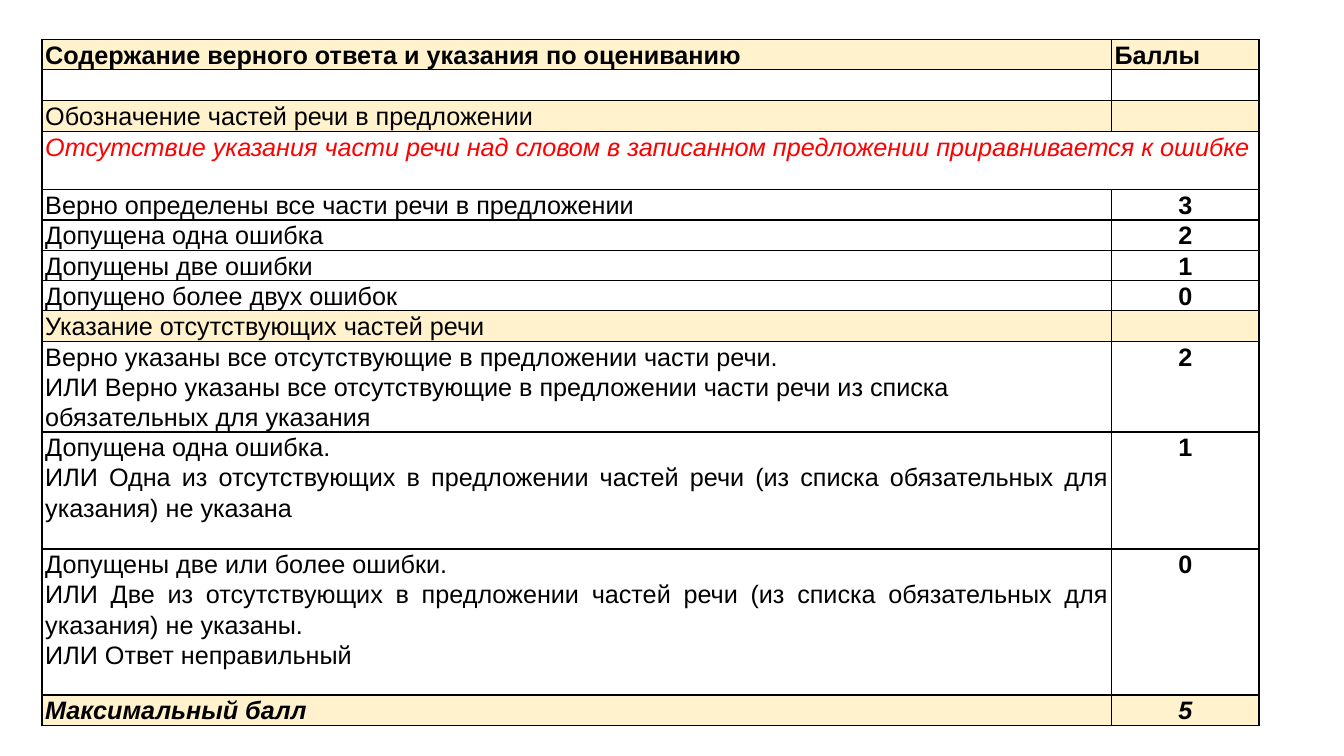
import pptx
import pptx.util
import pptx.dml.color
import pptx.enum.text
import lxml.etree

Cm = pptx.util.Cm
Align = pptx.enum.text.PP_ALIGN
CREAM, WHITE, BLACK, RED = "FFF2CC", "FFFFFF", "000000", "FF0000"


def color(value):
    return pptx.dml.color.RGBColor.from_string(value)


def add_borders(cell):
    properties = cell._tc.get_or_add_tcPr()
    namespace = "http://schemas.openxmlformats.org/drawingml/2006/main"
    for side in ("lnL", "lnR", "lnT", "lnB"):
        line = lxml.etree.SubElement(properties, f"{{{namespace}}}{side}", w="12700")
        fill = lxml.etree.SubElement(line, f"{{{namespace}}}solidFill")
        lxml.etree.SubElement(fill, f"{{{namespace}}}srgbClr", val=BLACK)


criteria = [
    ("Содержание верного ответа и указания по оцениванию", "Баллы", 0.74, CREAM),
    ("", "", 0.74, WHITE),
    ("Обозначение частей речи в предложении", "", 0.74, CREAM),
    ("Отсутствие указания части речи над словом в записанном предложении приравнивается к ошибке", "", 1.47, WHITE),
    ("Верно определены все части речи в предложении", "3", 0.74, WHITE),
    ("Допущена одна ошибка", "2", 0.74, WHITE),
    ("Допущены две ошибки", "1", 0.74, WHITE),
    ("Допущено более двух ошибок", "0", 0.74, WHITE),
    ("Указание отсутствующих частей речи", "", 0.74, CREAM),
    ("Верно указаны все отсутствующие в предложении части речи.\n"
     "ИЛИ Верно указаны все отсутствующие в предложении части речи из списка\n"
     "обязательных для указания", "2", 2.26, WHITE),
    ("Допущена одна ошибка.\n"
     "ИЛИ Одна из отсутствующих в предложении частей речи (из списка обязательных для указания) не указана",
     "1", 2.95, WHITE),
    ("Допущены две или более ошибки.\n"
     "ИЛИ Две из отсутствующих в предложении частей речи (из списка обязательных для указания) не указаны.\n"
     "ИЛИ Ответ неправильный", "0", 3.68, WHITE),
    ("Максимальный балл", "5", 0.74, CREAM),
]
header_row, warning_row, total_row = 0, 3, len(criteria) - 1
justified = {(10, 0), (10, 1), (11, 1)}

presentation = pptx.Presentation()
presentation.slide_width = Cm(33.87)
presentation.slide_height = Cm(19.05)
slide = presentation.slides.add_slide(presentation.slide_layouts[6])

total_height = sum(height for _, _, height, _ in criteria)
rubric = slide.shapes.add_table(
    len(criteria), 2, Cm(1.06), Cm(1), Cm(30.67), Cm(total_height)
).table
rubric.first_row = False
rubric.horz_banding = False
rubric.columns[0].width = Cm(26.95)
rubric.columns[1].width = Cm(3.72)

for row, (criterion, points, height, background) in enumerate(criteria):
    rubric.rows[row].height = Cm(height)
    for column, text in enumerate((criterion, points)):
        cell = rubric.cell(row, column)
        add_borders(cell)
        cell.fill.solid()
        cell.fill.fore_color.rgb = color(background)
        cell.margin_left = cell.margin_right = Cm(0.08)
        cell.margin_top = cell.margin_bottom = 0
        cell.text_frame.text = text
        for index, paragraph in enumerate(cell.text_frame.paragraphs):
            paragraph.line_spacing = 1.07
            if column == 1 and row != header_row:
                paragraph.alignment = Align.CENTER
            elif column == 0 and (row, index) in justified:
                paragraph.alignment = Align.JUSTIFY
            else:
                paragraph.alignment = Align.LEFT
            for run in paragraph.runs:
                run.font.name = "Arial"
                run.font.size = pptx.util.Pt(18)
                run.font.bold = column == 1 or row in (header_row, total_row)
                run.font.italic = row in (warning_row, total_row)
                run.font.color.rgb = color(RED if row == warning_row else BLACK)

rubric.cell(warning_row, 0).merge(rubric.cell(warning_row, 1))

presentation.save("out.pptx")
